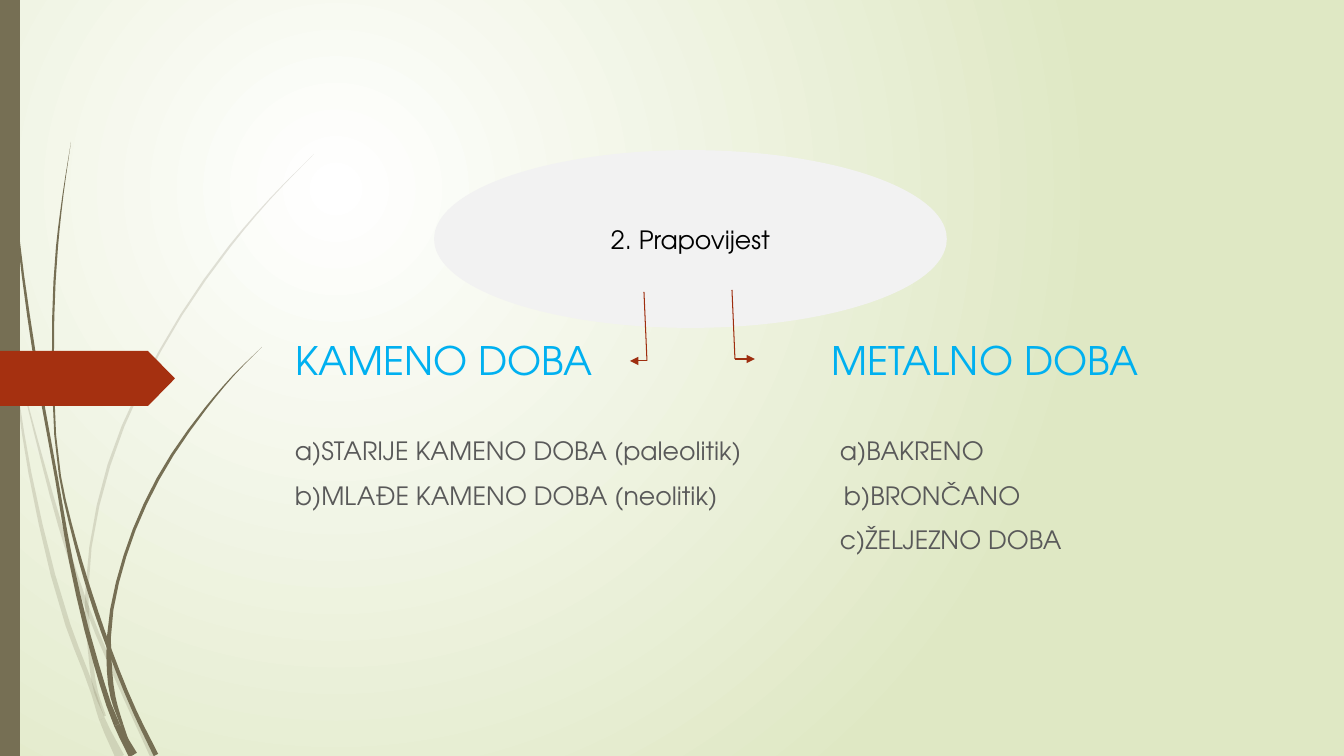
from math import dist, hypot
from lxml.etree import SubElement as Sub
from pptx import Presentation
from pptx.dml.color import RGBColor
from pptx.enum.shapes import MSO_CONNECTOR as Link, MSO_SHAPE as Kind
from pptx.enum.text import MSO_ANCHOR as Anchor, PP_ALIGN as Align
from pptx.oxml.ns import qn
from pptx.util import Pt

# Content: lengths in px, each tab measured from the left edge of the text
FONT = "TeX Gyre Adventor"
TOPIC = "2. Prapovijest"
HEADS = ("KAMENO DOBA", "METALNO DOBA", 536)
AGES = [
    ("a)STARIJE KAMENO DOBA (paleolitik)", "a)BAKRENO", 545),
    ("b)MLAĐE KAMENO DOBA (neolitik)", "b)BRONČANO", 549),
    ("", "c)ŽELJEZNO DOBA", 545),
]
OLIVE, RED, RUST = "766F54", "A53010", "9E2E0F"
WHITE, GREEN, PALE = "FFFFFF", "DFE8C4", "F2F2F2"
BLUE, GRAY, BLACK = "00B0F0", "595959", "000000"

# Boxes: left, top, width, height
TITLE = (285, 68, 983, 344)
BODY = (285, 389, 983, 212)
OVAL = (435, 151, 511, 176)
BAR = (0, 0, 20, 756)
TAG = (0, 351, 175, 55)
# Bent arrows: start, corner, tip
BENDS = [
    [(644, 292), (647, 361), (630, 361)],
    [(732, 290), (735, 359), (755, 359)],
]
# Grass blades in parts, each going on from the last: x, y, thickness
FAINT = [
    [[(0, 293, 4), (11, 353, 2)],
     [(30, 473, 3), (68, 625, 5), (94, 694, 5), (102, 719, 6)],
     [(120, 757, 9)]],
    [[(15, 355, 0), (36, 437, 2), (60, 525, 4), (85, 602, 4)],
     [(126, 699, 4), (153, 757, 5)]],
    [[(314, 154, 0), (270, 199, 1), (230, 246, 2), (160, 351, 2),
      (109, 465, 3), (87, 589, 3)],
     [(87, 612, 4)],
     [(90, 651, 4), (96, 692, 4), (105, 716, 2)]],
]
DARK = [
    [[(4, 0, 1), (8, 110, 1), (18, 234, 2), (35, 358, 3), (57, 481, 3)],
     [(71, 561, 4), (96, 663, 5), (117, 725, 6)],
     [(133, 755, 9)]],
    [[(71, 142, 0), (63, 195, 1), (57, 247, 2), (53, 352, 2), (60, 476, 2)],
     [(76, 545, 3), (91, 596, 4), (109, 648, 4)],
     [(135, 712, 4), (156, 755, 5)]],
    [[(262, 347, 0), (233, 376, 1), (206, 408, 2), (158, 479, 3),
      (125, 556, 3), (109, 637, 4)],
     [(109, 658, 5)],
     [(113, 697, 5), (122, 725, 3)],
     [(133, 755, 2)]],
]
STEPS = 3
UNIT = 914400 / 100.8


def px(n):
    return round(n * UNIT)


def tint(code):
    return RGBColor.from_string(code)


def place(shape, box):
    shape.left, shape.top, shape.width, shape.height = map(px, box)


def paint(shape, code, alpha=100):
    shape.shadow.inherit = False
    shape.fill.solid()
    shape.fill.fore_color.rgb = tint(code)
    shape.line.fill.background()
    if alpha < 100:
        mark = shape.element.spPr.find(".//" + qn("a:srgbClr"))
        Sub(mark, qn("a:alpha"), val=str(alpha * 1000))


def style(para, size, code, align=Align.LEFT):
    para.alignment = align
    para.font.name, para.font.size = FONT, Pt(size)
    para.font.color.rgb = tint(code)


def pair(para, row, size, code):
    """Write two columns on one line, set apart by a tab stop."""
    left, right, stop = row
    para.text = left + "\t" + right
    style(para, size, code)
    tabs = Sub(para._p.get_or_add_pPr(), qn("a:tabLst"))
    Sub(tabs, qn("a:tab"), pos=str(px(stop)), algn="l")


def mix(p, q, start, end, t):
    part = (t - start) / (end - start)
    return [a + (b - a) * part for a, b in zip(p, q)]


def smooth(knots):
    """Run a Catmull-Rom curve, timed by distance, through the knots."""
    first = [2 * a - b for a, b in zip(*knots[:2])]
    last = [2 * a - b for a, b in zip(knots[-1], knots[-2])]
    ends = [first, *knots, last]
    for four in zip(ends, ends[1:], ends[2:], ends[3:]):
        time = [0]
        for p, q in zip(four, four[1:]):
            time.append(time[-1] + dist(p[:2], q[:2]))
        for i in range(STEPS):
            t = time[1] + (time[2] - time[1]) * i / STEPS
            one = [mix(four[k], four[k + 1], time[k], time[k + 1], t)
                   for k in range(3)]
            two = [mix(one[k], one[k + 1], time[k], time[k + 2], t)
                   for k in range(2)]
            yield mix(*two, time[1], time[2], t)
    yield knots[-1]


def blade(shapes, parts, alpha):
    dots = list(smooth(sum(parts, [])))
    left, right = [], []
    for i, (x, y, wide) in enumerate(dots):
        old, new = dots[max(i - 1, 0)], dots[min(i + 1, len(dots) - 1)]
        dx, dy = new[0] - old[0], new[1] - old[1]
        half = wide / 2 / hypot(dx, dy)
        left.append((px(x - dy * half), px(y + dx * half)))
        right.append((px(x + dy * half), px(y - dx * half)))
    start, count = 0, -1
    for part in parts:
        count += len(part)
        end = count * STEPS
        edge = left[start:end + 1] + right[start:end + 1][::-1]
        form = shapes.build_freeform(*edge[0])
        form.add_line_segments(edge[1:], close=True)
        paint(form.convert_to_shape(), OLIVE, alpha)
        start = end


def bend(shapes, dots):
    for start, end in zip(dots, dots[1:]):
        line = shapes.add_connector(Link.STRAIGHT, *map(px, start + end))
        line.line.width = Pt(0.75)
        line.line.color.rgb = tint(RUST)
        Sub(line.element.spPr, qn("a:effectLst"))
    Sub(line.line._get_or_add_ln(), qn("a:tailEnd"), type="triangle")


def main():
    deck = Presentation()
    deck.slide_width, deck.slide_height = px(1344), px(756)
    slide = deck.slides.add_slide(deck.slide_layouts[5])
    shapes = slide.shapes

    # Radial background
    back = slide.background.fill
    back.gradient()
    for stop, code, spot in zip(back.gradient_stops, (WHITE, GREEN), (0, 1)):
        stop.color.rgb, stop.position = tint(code), spot
    lin = slide.element.find(".//" + qn("a:lin"))
    grad = lin.getparent()
    grad.remove(lin)
    ring = Sub(grad, qn("a:path"), path="circle")
    Sub(ring, qn("a:fillToRect"), l="50000", t="50000", r="100000", b="100000")

    # Grass, side bar and tag
    for group, alpha in ((FAINT, 20), (DARK, 100)):
        for parts in group:
            blade(shapes, parts, alpha)
    for kind, box, code in ((Kind.RECTANGLE, BAR, OLIVE),
                            (Kind.PENTAGON, TAG, RED)):
        sign = shapes.add_shape(kind, *map(px, box))
        paint(sign, code)
    sign.adjustments[0] = 0.49

    # Title with both ages
    title = shapes.title
    place(title, TITLE)
    frame = title.text_frame
    frame.word_wrap = True
    frame.vertical_anchor = Anchor.BOTTOM
    frame.margin_bottom = px(29)
    pair(frame.paragraphs[0], HEADS, 28, BLUE)

    # Periods of each age
    frame = shapes.add_textbox(*map(px, BODY)).text_frame
    frame.word_wrap = True
    frame.vertical_anchor = Anchor.MIDDLE
    for i, row in enumerate(AGES):
        para = frame.add_paragraph() if i else frame.paragraphs[0]
        para.space_before = Pt(10)
        pair(para, row, 18, GRAY)

    # Topic oval and its arrows
    oval = shapes.add_shape(Kind.OVAL, *map(px, OVAL))
    paint(oval, PALE)
    oval.line.color.rgb = tint(PALE)
    oval.line.width = Pt(1.25)
    frame = oval.text_frame
    frame.vertical_anchor = Anchor.MIDDLE
    frame.text = TOPIC
    style(frame.paragraphs[0], 18, BLACK, Align.CENTER)
    for dots in BENDS:
        bend(shapes, dots)

    deck.save("out.pptx")


if __name__ == "__main__":
    main()
